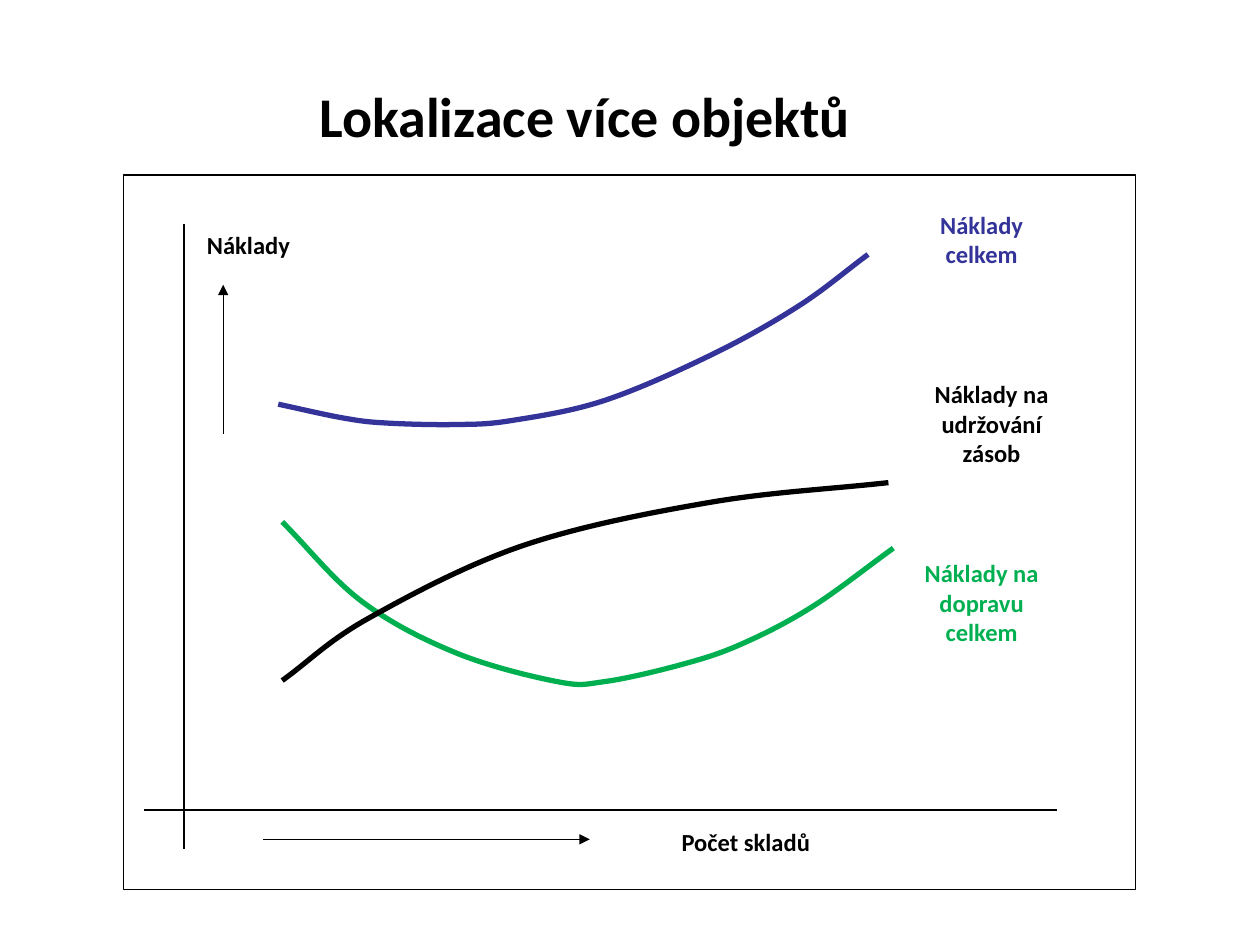
from pptx import Presentation
from pptx.dml.color import RGBColor
from pptx.enum.shapes import MSO_CONNECTOR, MSO_SHAPE
from pptx.enum.text import MSO_ANCHOR, MSO_AUTO_SIZE, PP_ALIGN
from pptx.oxml.ns import qn
from pptx.util import Cm, Pt

CENTER, LEFT = PP_ALIGN.CENTER, PP_ALIGN.LEFT
STRAIGHT = MSO_CONNECTOR.STRAIGHT
FONT = "Calibri"
BLACK, WHITE, GREEN, BLUE = "000000", "FFFFFF", "00B050", "333399"

# All positions are in centimetres.
TITLE = ("Lokalizace více objektů", (4.9, 1.52, 13.79, 1.63))
FRAME = (2.49, 3.53, 20.4, 14.4)

# from x, from y, to x, to y, arrowhead
LINES = [
    (3.71, 4.52, 3.71, 17.12, False),
    (2.9, 16.33, 21.31, 16.33, False),
    (5.31, 16.92, 11.89, 16.92, True),
    (4.5, 8.74, 4.5, 5.74, True),
]

# text, box, colour, alignment
LABELS = [
    ("Počet skladů", (13.49, 16.54, 8.61, 0.84), BLACK, LEFT),
    ("Náklady", (3.51, 4.52, 3, 0.86), BLACK, CENTER),
    ("Náklady na dopravu celkem", (18.29, 11.13, 3, 2.06), GREEN, CENTER),
    ("Náklady na udržování zásob", (18.49, 7.52, 3, 2.06), BLACK, CENTER),
    ("Náklady celkem", (18.29, 4.11, 3, 1.45), BLUE, CENTER),
]

# colour, points that the smooth curve passes through
CURVES = [
    (GREEN, [(5.69, 10.52), (7.29, 12.12), (9.19, 13.16), (11.23, 13.74), (12.19, 13.74),
             (13.69, 13.41), (14.91, 13), (16.36, 12.24), (18.01, 11.05)]),
    (BLACK, [(5.69, 13.72), (7.42, 12.47), (10.54, 11), (14.3, 10.13), (17.91, 9.73)]),
    (BLUE, [(5.61, 8.15), (6.93, 8.43), (7.8, 8.53), (9.19, 8.56), (10.31, 8.48),
            (12.17, 8.08), (14.33, 7.16), (16.1, 6.17), (17.5, 5.13)]),
]


def color(hex_value):
    return RGBColor.from_string(hex_value)


def lengths(values):
    return [Cm(value) for value in values]


def format_line(line, hex_value, width):
    line.color.rgb = color(hex_value)
    line.width = Pt(width)


def write_text(shape, text, size, hex_value, alignment):
    text_frame = shape.text_frame
    text_frame.text = text
    text_frame.word_wrap = True
    text_frame.auto_size = MSO_AUTO_SIZE.NONE
    paragraph = text_frame.paragraphs[0]
    paragraph.alignment = alignment
    font = paragraph.runs[0].font
    font.name, font.size, font.bold = FONT, Pt(size), True
    font.color.rgb = color(hex_value)


def add_line(slide, from_x, from_y, to_x, to_y, has_arrow):
    connector = slide.shapes.add_connector(STRAIGHT, *lengths((from_x, from_y, to_x, to_y)))
    format_line(connector.line, BLACK, 0.75)
    properties = connector.element.spPr
    if has_arrow:
        line = properties.find(qn("a:ln"))
        line.append(line.makeelement(qn("a:tailEnd"), {"type": "triangle"}))
    properties.append(properties.makeelement(qn("a:effectLst"), {}))


def bezier_points(knots):
    """Return two control points and an end point for each stretch of a spline."""
    def reflect(point, neighbour):
        return tuple(2 * a - b for a, b in zip(point, neighbour))

    padded = [reflect(knots[0], knots[1]), *knots, reflect(knots[-1], knots[-2])]
    points = []
    for before, start, end, after in zip(padded, padded[1:], padded[2:], padded[3:]):
        points.append([s + (e - b) / 6 for b, s, e in zip(before, start, end)])
        points.append([e - (a - s) / 6 for s, e, a in zip(start, end, after)])
        points.append(end)
    return points


def add_curve(slide, hex_value, knots):
    builder = slide.shapes.build_freeform(*lengths(knots[0]))
    builder.add_line_segments([lengths(point) for point in bezier_points(knots)], close=False)
    shape = builder.convert_to_shape()
    shape.shadow.inherit = False
    shape.fill.background()
    format_line(shape.line, hex_value, 3)
    # Every three straight segments become one cubic curve.
    segments = list(shape.element.iter(qn("a:lnTo")))
    outline = segments[0].getparent()
    for index in range(0, len(segments), 3):
        curve = outline.makeelement(qn("a:cubicBezTo"), {})
        outline.append(curve)
        for segment in segments[index:index + 3]:
            curve.append(segment[0])
            outline.remove(segment)


def main():
    presentation = Presentation()
    presentation.slide_width, presentation.slide_height = Cm(25.4), Cm(19.05)
    slide = presentation.slides.add_slide(presentation.slide_layouts[5])

    title = slide.shapes.title
    text, box = TITLE
    title.left, title.top, title.width, title.height = lengths(box)
    write_text(title, text, 32, BLACK, CENTER)
    title.text_frame.vertical_anchor = MSO_ANCHOR.TOP

    frame = slide.shapes.add_shape(MSO_SHAPE.RECTANGLE, *lengths(FRAME))
    frame.shadow.inherit = False
    frame.fill.solid()
    frame.fill.fore_color.rgb = color(WHITE)
    format_line(frame.line, BLACK, 0.75)

    for line in LINES:
        add_line(slide, *line)
    for hex_value, knots in CURVES:
        add_curve(slide, hex_value, knots)
    for text, box, hex_value, alignment in LABELS:
        label = slide.shapes.add_textbox(*lengths(box))
        write_text(label, text, 14, hex_value, alignment)

    presentation.save("out.pptx")


if __name__ == "__main__":
    main()
